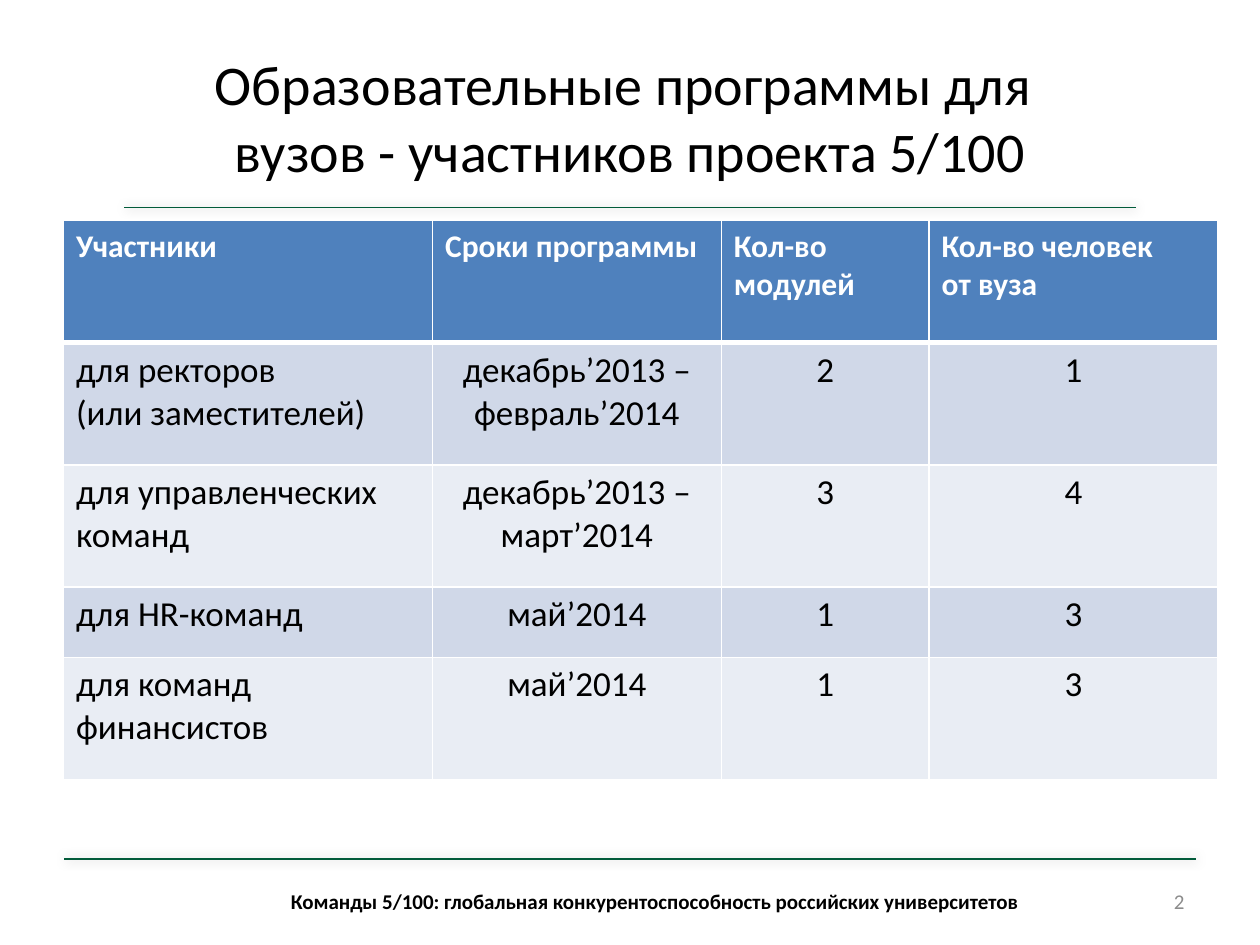
from lxml import etree
from pptx import Presentation
from pptx.dml.color import RGBColor
from pptx.enum.shapes import MSO_CONNECTOR
from pptx.enum.text import MSO_ANCHOR, PP_ALIGN
from pptx.oxml import parse_xml
from pptx.oxml.ns import nsdecls
from pptx.util import Cm, Pt

LEFT, CENTER, RIGHT = PP_ALIGN.LEFT, PP_ALIGN.CENTER, PP_ALIGN.RIGHT
MIDDLE = MSO_ANCHOR.MIDDLE
STRAIGHT = MSO_CONNECTOR.STRAIGHT

FONT = "Calibri"
BLACK, WHITE, GREY, GREEN = "000000", "FFFFFF", "8C8C8C", "025B3A"
HEAD_FILL = "4F81BD"
BANDS = ["D0D8E8", "E9EDF4"]

# Box in cm, lines, size, colour, bold, alignment
TEXTS = [
    ((1.27, 0.76, 22.86, 3.18),
     ["Образовательные программы для ", "вузов - участников проекта 5/100"],
     32, BLACK, False, CENTER),
    ((4.9, 17.65, 16.61, 1.02),
     ["Команды 5/100: глобальная конкурентоспособность российских университетов"],
     12, BLACK, True, CENTER),
    ((22.5, 17.65, 1.63, 1.02), ["2"], 12, GREY, False, RIGHT),
]

# Left, right, height in cm; width in points
RULES = [(1.3, 24.1, 17.32, 1.5), (2.51, 22.91, 4.19, 0.75)]

# Each cell is a list of paragraphs
HEAD = [["Участники"], ["Сроки программы"], ["Кол-во модулей"],
        ["Кол-во человек", "от вуза"]]
BODY = [
    [["для ректоров", "(или заместителей)"], ["декабрь’2013 – февраль’2014"], ["2"], ["1"]],
    [["для управленческих команд"], ["декабрь’2013 – март’2014"], ["3"], ["4"]],
    [["для HR-команд"], ["май’2014"], ["1"], ["3"]],
    [["для команд финансистов"], ["май’2014"], ["1"], ["3"]],
]
COLS = [7.44, 5.82, 4.19, 5.82]
ROWS = [2.46, 2.46, 2.46, 1.42, 2.46]
LEFT_EDGE, TOP_EDGE = 1.28, 4.45


def rgb(code):
    return RGBColor.from_string(code)


def add_run(para, text, size, color, bold):
    run = para.add_run()
    run.text = text
    font = run.font
    font.name, font.size, font.bold = FONT, Pt(size), bold
    font.color.rgb = rgb(color)


def add_text(slide, box, lines, size, color, bold, align):
    frame = slide.shapes.add_textbox(*map(Cm, box)).text_frame
    frame.word_wrap = True
    frame.vertical_anchor = MIDDLE
    para = frame.paragraphs[0]
    para.alignment = align
    for i, line in enumerate(lines):
        if i:
            para.add_line_break()
        add_run(para, line, size, color, bold)


def add_rule(slide, left, right, y, width):
    """Draw a level line with a faint soft shadow."""
    rule = slide.shapes.add_connector(STRAIGHT, Cm(left), Cm(y), Cm(right), Cm(y))
    rule.line.color.rgb = rgb(GREEN)
    rule.line.width = Pt(width)
    rule._element.spPr.append(parse_xml(
        f'<a:effectLst {nsdecls("a")}>'
        f'<a:outerShdw blurRad="{Pt(6)}" dist="0" dir="18900000">'
        f'<a:srgbClr val="{BLACK}"><a:alpha val="20000"/></a:srgbClr>'
        '</a:outerShdw></a:effectLst>'))


def set_edges(cell, widths):
    """Put white borders, given as left, right, top, bottom, before the fill."""
    props = cell._tc.get_or_add_tcPr()
    for i, (side, width) in enumerate(zip("LRTB", widths)):
        edge = parse_xml(f'<a:ln{side} {nsdecls("a")} w="{Pt(width)}"/>')
        fill = etree.SubElement(edge, edge.tag.split("}")[0] + "}solidFill")
        etree.SubElement(fill, fill.tag.replace("solidFill", "srgbClr"), val=WHITE)
        props.insert(i, edge)


def fill_cell(cell, lines, row, col):
    head = row == 0
    cell.fill.solid()
    cell.fill.fore_color.rgb = rgb(HEAD_FILL if head else BANDS[(row - 1) % 2])
    set_edges(cell, (1, 1, 3 if row == 1 else 1, 3 if head else 1))
    frame = cell.text_frame
    for i, line in enumerate(lines):
        para = frame.add_paragraph() if i else frame.paragraphs[0]
        para.alignment = LEFT if head or col == 0 else CENTER
        add_run(para, line, 18 if head else 20, WHITE if head else BLACK, head)


def add_grid(slide):
    table = slide.shapes.add_table(
        len(ROWS), len(COLS), Cm(LEFT_EDGE), Cm(TOP_EDGE),
        Cm(sum(COLS)), Cm(sum(ROWS))).table
    for col, width in zip(table.columns, COLS):
        col.width = Cm(width)
    for row, height in zip(table.rows, ROWS):
        row.height = Cm(height)
    for r, cells in enumerate([HEAD] + BODY):
        for c, lines in enumerate(cells):
            fill_cell(table.cell(r, c), lines, r, c)


def main():
    deck = Presentation()
    deck.slide_width, deck.slide_height = Cm(25.4), Cm(19.05)
    slide = deck.slides.add_slide(deck.slide_layouts[6])
    for rule in RULES:
        add_rule(slide, *rule)
    title, *footer = TEXTS
    add_text(slide, *title)
    add_grid(slide)
    for item in footer:
        add_text(slide, *item)
    deck.save("out.pptx")


if __name__ == "__main__":
    main()
